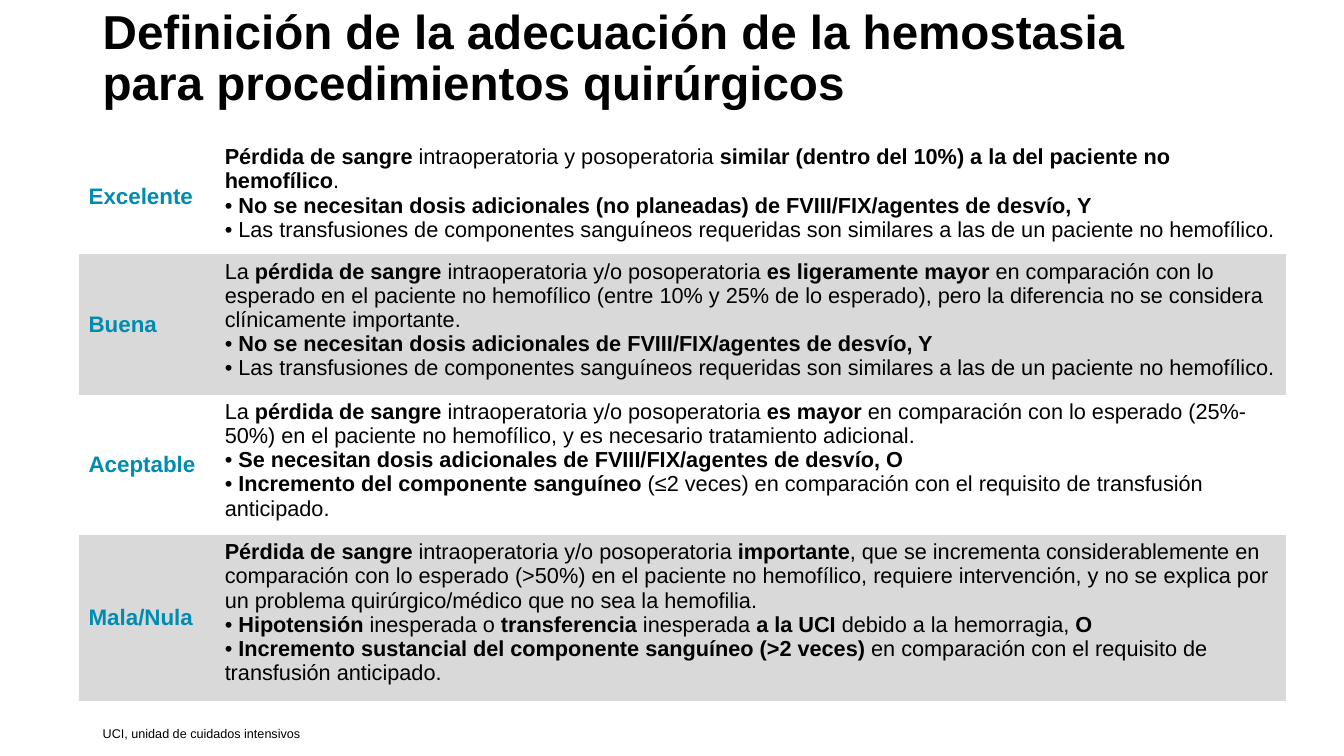
from dataclasses import dataclass

from pptx import Presentation
from pptx.dml.color import RGBColor
from pptx.enum.text import MSO_ANCHOR
from pptx.util import Cm, Pt


@dataclass(frozen=True)
class Theme:
    face: str = "Arial"
    ink: str = "000000"
    teal: str = "008BB0"
    white: str = "FFFFFF"
    gray: str = "D9D9D9"
    title: float = 34
    grade: float = 16
    body: float = 15.5
    note: float = 9


THEME = Theme()
NO_GRID = "{2D5ABB26-0587-4C30-8999-92F81FD0307C}"
COLS = (3.43, 27)
LINE, PAD = 0.61, 0.25

# Grade, number of text lines, paragraphs with *bold* parts
GRADES = [
    ("Excelente", 4, [
        "*Pérdida de sangre* intraoperatoria y posoperatoria "
        "*similar (dentro del 10%) a la del paciente no hemofílico*.",
        "• *No se necesitan dosis adicionales (no planeadas) de "
        "FVIII/FIX/agentes de desvío, Y*",
        "• Las transfusiones de componentes sanguíneos requeridas son "
        "similares a las de un paciente no hemofílico.",
    ]),
    ("Buena", 5, [
        "La *pérdida de sangre* intraoperatoria y/o posoperatoria "
        "*es ligeramente mayor* en comparación con lo esperado en el "
        "paciente no hemofílico (entre 10% y 25% de lo esperado), pero la "
        "diferencia no se considera clínicamente importante.",
        "• *No se necesitan dosis adicionales de "
        "FVIII/FIX/agentes de desvío, Y*",
        "• Las transfusiones de componentes sanguíneos requeridas son "
        "similares a las de un paciente no hemofílico.",
    ]),
    ("Aceptable", 5, [
        "La *pérdida de sangre* intraoperatoria y/o posoperatoria "
        "*es mayor* en comparación con lo esperado (25%‐50%) en el "
        "paciente no hemofílico, y es necesario tratamiento adicional.",
        "• *Se necesitan dosis adicionales de "
        "FVIII/FIX/agentes de desvío, O*",
        "• *Incremento del componente sanguíneo* (≤2 veces) en comparación "
        "con el requisito de transfusión anticipado.",
    ]),
    ("Mala/Nula", 6, [
        "*Pérdida de sangre* intraoperatoria y/o posoperatoria "
        "*importante*, que se incrementa considerablemente en comparación "
        "con lo esperado (>50%) en el paciente no hemofílico, requiere "
        "intervención, y no se explica por un problema quirúrgico/médico "
        "que no sea la hemofilia.",
        "• *Hipotensión* inesperada o *transferencia* inesperada "
        "*a la UCI* debido a la hemorragia, *O*",
        "• *Incremento sustancial del componente sanguíneo (>2 veces)* en "
        "comparación con el requisito de transfusión anticipado.",
    ]),
]


def write(frame, *texts, size, color=THEME.ink, space=None):
    """Fill a text frame, one paragraph per text; *stars* mark bold parts."""
    for i, text in enumerate(texts):
        para = frame.add_paragraph() if i else frame.paragraphs[0]
        para.line_spacing = space
        for j, part in enumerate(text.split("*")):
            if part:
                run = para.add_run()
                run.text = part
                font = run.font
                font.name, font.size = THEME.face, Pt(size)
                font.bold = j % 2 == 1
                font.color.rgb = RGBColor.from_string(color)


def add_box(slide, left, top, width, height, anchor):
    box = slide.shapes.add_textbox(Cm(left), Cm(top), Cm(width), Cm(height))
    frame = box.text_frame
    frame.word_wrap = True
    frame.vertical_anchor = anchor
    return frame


def add_grades(slide, left, top):
    highs = [LINE * lines + PAD for _, lines, _ in GRADES]
    table = slide.shapes.add_table(
        len(GRADES), len(COLS), Cm(left), Cm(top),
        Cm(sum(COLS)), Cm(sum(highs))).table
    table.first_row = table.horz_banding = False
    table._tbl.tblPr[0].text = NO_GRID
    for col, width in zip(table.columns, COLS):
        col.width = Cm(width)
    for i, (grade, _, texts) in enumerate(GRADES):
        row = table.rows[i]
        row.height = Cm(highs[i])
        for cell in row.cells:
            cell.fill.solid()
            shade = THEME.gray if i % 2 else THEME.white
            cell.fill.fore_color.rgb = RGBColor.from_string(shade)
        name, text = row.cells
        name.vertical_anchor = MSO_ANCHOR.MIDDLE
        write(name.text_frame, f"*{grade}*", size=THEME.grade,
              color=THEME.teal)
        write(text.text_frame, *texts, size=THEME.body)


def main():
    deck = Presentation()
    deck.slide_width, deck.slide_height = Cm(33.87), Cm(19.05)
    slide = deck.slides.add_slide(deck.slide_layouts[6])

    title = add_box(slide, 2.34, 0, 28.96, 3.02, MSO_ANCHOR.MIDDLE)
    write(title, "*Definición de la adecuación de la hemostasia para "
          "procedimientos quirúrgicos*", size=THEME.title, space=0.9)

    add_grades(slide, 1.98, 3.53)

    note = add_box(slide, 2.34, 17.65, 27.56, 1.02, MSO_ANCHOR.BOTTOM)
    note.margin_bottom = 0
    write(note, "UCI, unidad de cuidados intensivos", size=THEME.note)

    deck.save("out.pptx")


if __name__ == "__main__":
    main()
